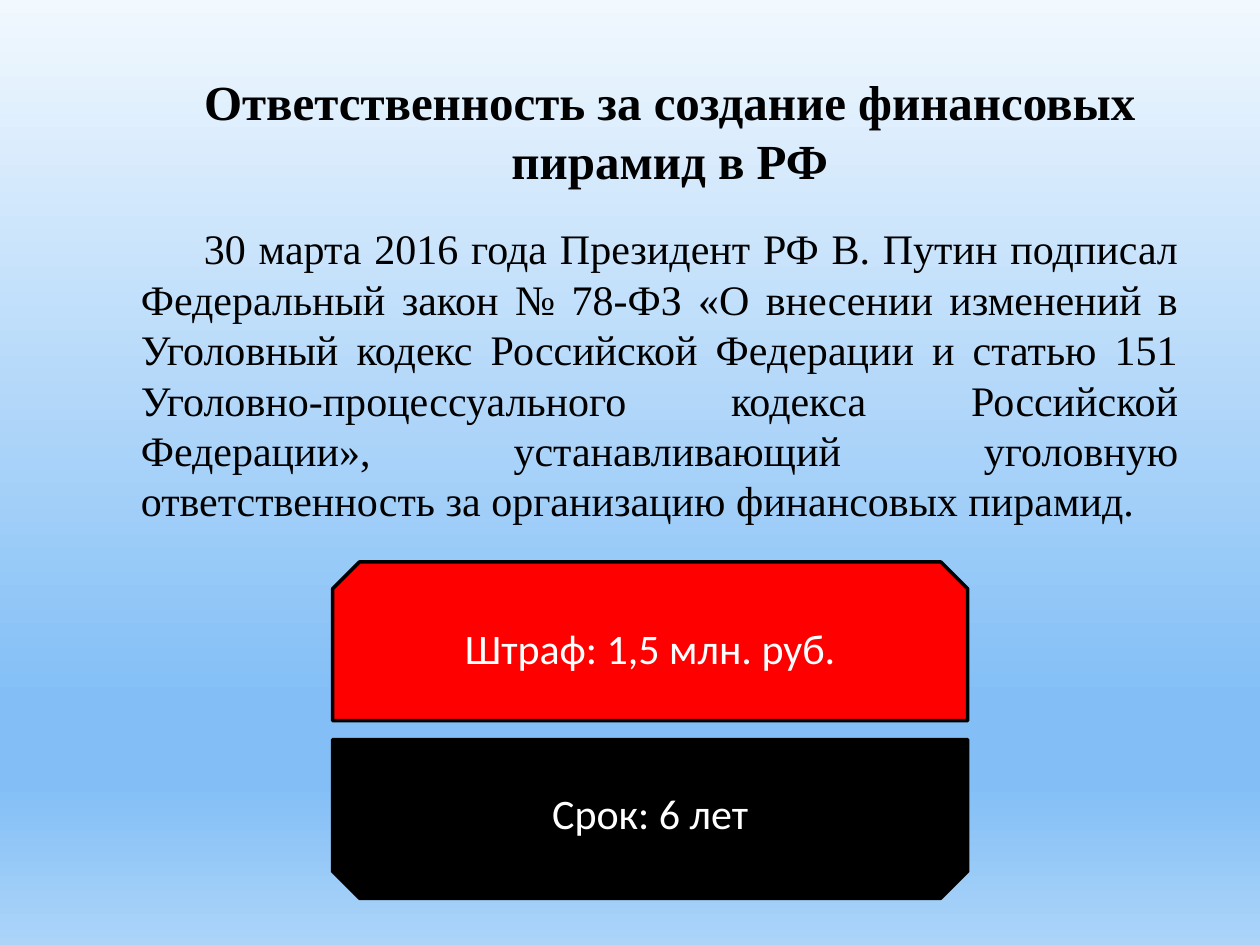
"""Build a slide on liability for running financial pyramids."""
import copy

import pptx
import pptx.dml.color
import pptx.enum.shapes
import pptx.enum.text
import pptx.oxml.ns
import pptx.util

COLUMNS, ROWS = 100, 75
CELL = pptx.util.Inches(0.1)
ALIGN = pptx.enum.text.PP_ALIGN
SERIF = "Times New Roman"
SKY = [(0, "F1F8FE"), (0.74, "83BFF6"), (0.83, "83BFF6"), (1, "ACD4F9")]
TITLE = "Ответственность за создание финансовых пирамид в РФ"
LAW = (
    "30 марта 2016 года Президент РФ В. Путин подписал Федеральный закон "
    "№ 78-ФЗ «О внесении изменений в Уголовный кодекс Российской Федерации "
    "и статью 151 Уголовно-процессуального кодекса Российской Федерации», "
    "устанавливающий уголовную ответственность за организацию финансовых пирамид."
)
PENALTIES = [
    ("Штраф: 1,5 млн. руб.", "FF0000", (0.17, 0)),
    ("Срок: 6 лет", "000000", (0, 0.17)),
]


def colour(hex_value):
    """Return the RGB colour for a hex string."""
    return pptx.dml.color.RGBColor.from_string(hex_value)


def grid(column, row, columns, rows):
    """Return left, top, width and height for a span of grid cells."""
    return [round(cells * CELL) for cells in (column, row, columns, rows)]


def apply(target, values):
    """Set each named format value on the target."""
    for name, value in values.items():
        setattr(target, name, value)


def write(frame, text, hex_value, align, frame_format, font_format):
    """Fill a text frame with one formatted paragraph and return it."""
    apply(frame, {"word_wrap": True, **frame_format})
    paragraph = frame.paragraphs[0]
    paragraph.alignment = align
    run = paragraph.add_run()
    run.text = text
    apply(run.font, font_format)
    run.font.color.rgb = colour(hex_value)
    return paragraph


def paint_background(slide, stops):
    """Give the slide a vertical gradient with the listed stops."""
    fill = slide.background.fill
    fill.gradient()
    fill.gradient_angle = 270
    stop_list = slide.element.find(".//" + pptx.oxml.ns.qn("a:gsLst"))
    while len(stop_list) < len(stops):
        stop_list.append(copy.deepcopy(stop_list[0]))
    for stop, (position, hex_value) in zip(fill.gradient_stops, stops):
        stop.color.rgb = colour(hex_value)
        stop.position = position


def add_text(slide, span, text, align, font_format):
    """Add a black serif text box and return its paragraph."""
    frame = slide.shapes.add_textbox(*grid(*span)).text_frame
    growing = {"auto_size": pptx.enum.text.MSO_AUTO_SIZE.SHAPE_TO_FIT_TEXT}
    return write(frame, text, "000000", align, growing,
                 {"name": SERIF, **font_format})


def add_penalty(slide, span, text, fill, snips):
    """Add a plate with snipped top or bottom corners."""
    plate = slide.shapes.add_shape(
        pptx.enum.shapes.MSO_SHAPE.SNIP_2_SAME_RECTANGLE, *grid(*span))
    plate.shadow.inherit = False
    plate.fill.solid()
    plate.fill.fore_color.rgb = colour(fill)
    plate.line.color.rgb = colour("000000")
    plate.line.width = pptx.util.Pt(2)
    for corner, snip in enumerate(snips):
        plate.adjustments[corner] = snip
    write(plate.text_frame, text, "FFFFFF", ALIGN.CENTER,
          {"vertical_anchor": pptx.enum.text.MSO_ANCHOR.MIDDLE},
          {"name": "Calibri", "size": pptx.util.Pt(24)})


def main():
    """Build and save the presentation."""
    deck = pptx.Presentation()
    apply(deck, {"slide_width": COLUMNS * CELL, "slide_height": ROWS * CELL})
    slide = deck.slides.add_slide(deck.slide_layouts[6])
    paint_background(slide, SKY)
    add_text(slide, (13, 5.2, 80.3, 10.4), TITLE, ALIGN.CENTER,
             {"size": pptx.util.Pt(28), "bold": True})
    law = add_text(slide, (10.2, 17.2, 84.3, 25.2), LAW, ALIGN.JUSTIFY,
                   {"size": pptx.util.Pt(24)})
    law._p.get_or_add_pPr().set("indent", str(5 * CELL))
    for index, penalty in enumerate(PENALTIES):
        add_penalty(slide, (26.4, 44.6 + 14.1 * index, 50.4, 12.6), *penalty)
    deck.save("out.pptx")


if __name__ == "__main__":
    main()
